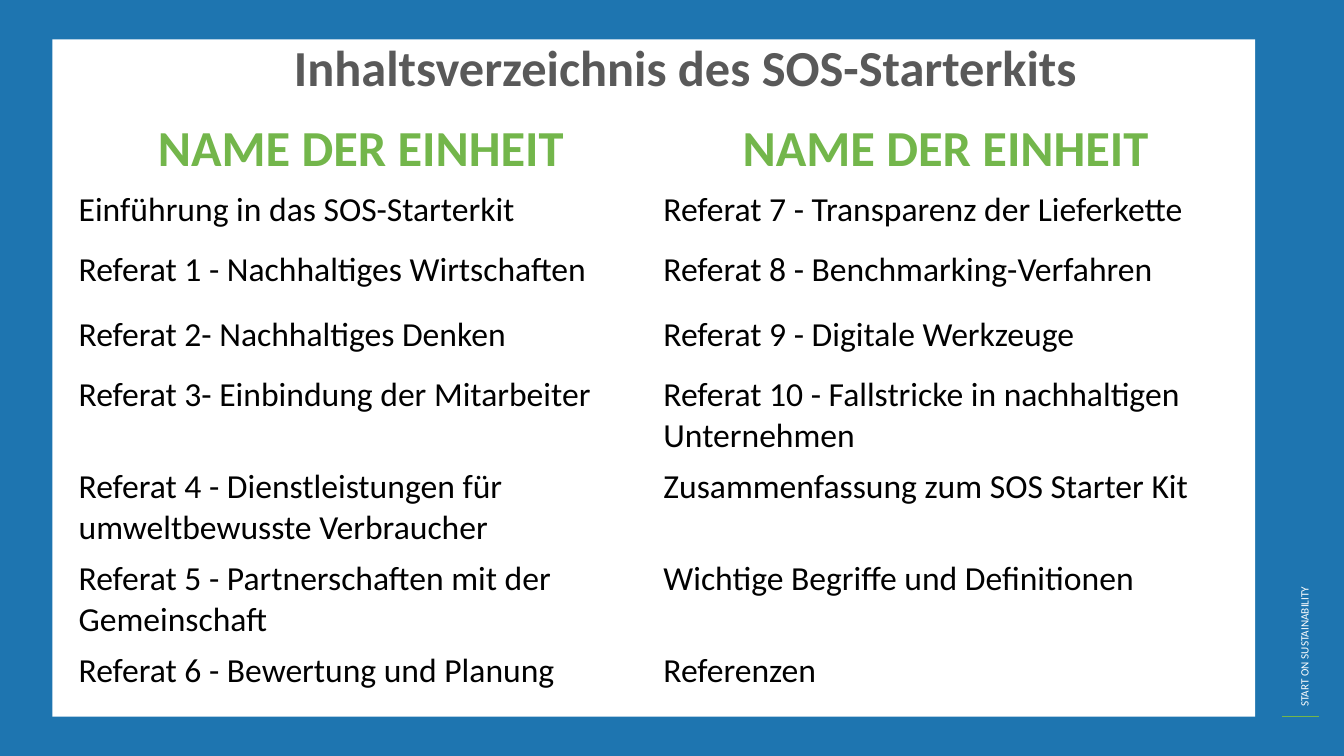
from dataclasses import dataclass

from lxml.etree import SubElement
from pptx import Presentation
from pptx.dml.color import RGBColor
from pptx.enum.shapes import MSO_CONNECTOR as Connector, MSO_SHAPE as Shape
from pptx.enum.text import MSO_ANCHOR as Anchor, MSO_AUTO_SIZE as AutoSize, PP_ALIGN as Align
from pptx.oxml.ns import qn
from pptx.util import Inches, Pt

# Content
TITLE = "Inhaltsverzeichnis des SOS-Starterkits"
SIDE_LABEL = "START ON SUSTAINABILITY"
HEADING = "NAME DER EINHEIT"
UNITS = [
    ("Einführung in das SOS-Starterkit", "Referat 7 - Transparenz der Lieferkette"),
    ("Referat 1 - Nachhaltiges Wirtschaften", "Referat 8 - Benchmarking-Verfahren"),
    ("Referat 2- Nachhaltiges Denken", "Referat 9 - Digitale Werkzeuge"),
    ("Referat 3- Einbindung der Mitarbeiter",
     "Referat 10 - Fallstricke in nachhaltigen Unternehmen"),
    ("Referat 4 - Dienstleistungen für umweltbewusste Verbraucher",
     "Zusammenfassung zum SOS Starter Kit"),
    ("Referat 5 - Partnerschaften mit der Gemeinschaft", "Wichtige Begriffe und Definitionen"),
    ("Referat 6 - Bewertung und Planung", "Referenzen"),
]


@dataclass(frozen=True)
class Theme:
    font: str = "Calibri"
    blue: str = "1E75B0"
    green: str = "73B64B"
    grey: str = "595959"
    black: str = "010101"
    white: str = "FFFFFF"
    heading: int = 36
    unit: int = 24
    label: int = 8


THEME = Theme()

# Layout in inches
WIDTH, HEIGHT = 13.33, 7.5
PANEL = (0.52, 0.39, 11.93, 6.72)
TITLE_BOX = (1.33, 0.38, 10.94, 0.88)
LABEL_BOX = (10.71, 4.76, 4.46, 0.24)
RULE_LEFT, RULE_RIGHT, RULE_Y = 12.72, 13.08, 7.11
TABLE_LEFT, TABLE_TOP, COLUMN, ROW = 0.68, 1.12, 5.8, 0.59
TALL_ROWS = {2: 0.65, 4: 0.63}


def inches(values):
    return [Inches(value) for value in values]


def write(frame, text, size, color, bold=False, align=Align.LEFT):
    para = frame.paragraphs[0]
    para.alignment = align
    span = para.add_run()
    span.text = text
    span.font.name = THEME.font
    span.font.size = Pt(size)
    span.font.bold = bold
    span.font.color.rgb = RGBColor.from_string(color)
    return para


def add_frame(page):
    fill = page.background.fill
    fill.solid()
    fill.fore_color.rgb = RGBColor.from_string(THEME.blue)

    panel = page.shapes.add_shape(Shape.RECTANGLE, *inches(PANEL))
    panel.shadow.inherit = False
    panel.fill.solid()
    panel.fill.fore_color.rgb = RGBColor.from_string(THEME.white)
    panel.line.fill.background()

    label = page.shapes.add_textbox(*inches(LABEL_BOX))
    label.rotation = 270
    label.text_frame.word_wrap = True
    write(label.text_frame, SIDE_LABEL, THEME.label, THEME.white)

    rule = page.shapes.add_connector(
        Connector.STRAIGHT, *inches((RULE_LEFT, RULE_Y, RULE_RIGHT, RULE_Y)))
    rule.line.color.rgb = RGBColor.from_string(THEME.green)
    rule.line.width = Pt(1)
    SubElement(rule._element.spPr, qn("a:effectLst"))


def add_title(page):
    title = page.shapes.title
    title.left, title.top, title.width, title.height = inches(TITLE_BOX)
    frame = title.text_frame
    frame.auto_size = AutoSize.NONE
    frame.vertical_anchor = Anchor.TOP
    para = write(frame, TITLE, THEME.heading, THEME.grey, True, Align.CENTER)
    para.line_spacing = 0.9
    # Bring the title in front of the white panel
    page.shapes._spTree.append(title._element)


def add_units(page):
    rows = [(HEADING, HEADING)] + UNITS
    heights = [TALL_ROWS.get(index, ROW) for index in range(len(rows))]
    columns = len(rows[0])
    table = page.shapes.add_table(
        len(rows), columns,
        *inches((TABLE_LEFT, TABLE_TOP, columns * COLUMN, sum(heights)))).table
    table.first_row = table.horz_banding = False
    for column in table.columns:
        column.width = Inches(COLUMN)
    for index, texts in enumerate(rows):
        table.rows[index].height = Inches(heights[index])
        for cell, text in zip(table.rows[index].cells, texts):
            cell.fill.background()
            if index == 0:
                write(cell.text_frame, text, THEME.heading, THEME.green, True, Align.CENTER)
            else:
                write(cell.text_frame, text, THEME.unit, THEME.black)


def main():
    deck = Presentation()
    deck.slide_width, deck.slide_height = inches((WIDTH, HEIGHT))
    page = deck.slides.add_slide(deck.slide_layouts.get_by_name("Title Only"))
    add_frame(page)
    add_title(page)
    add_units(page)
    deck.save("out.pptx")


if __name__ == "__main__":
    main()
